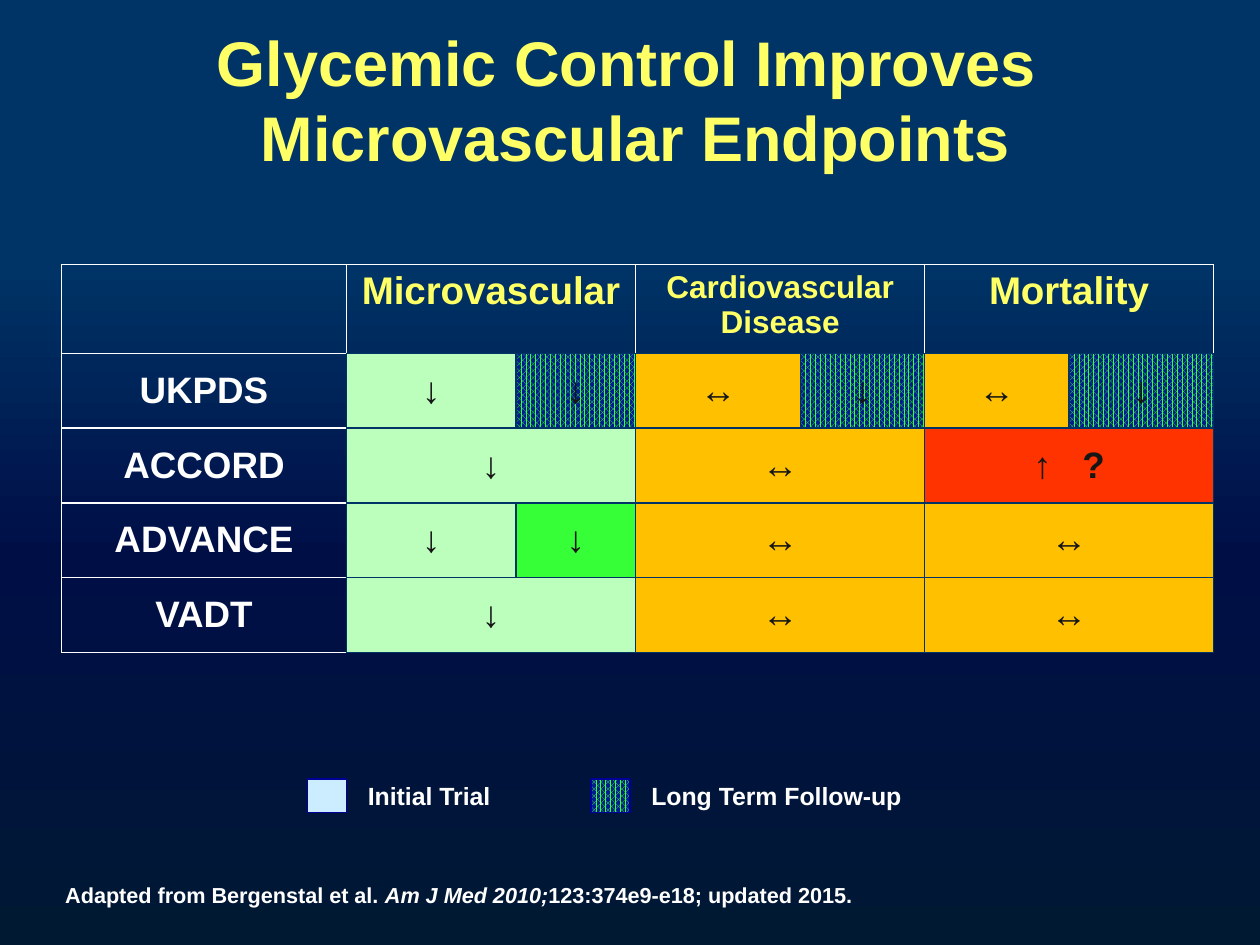
"""Build the slide on glycemic control and its trial endpoints."""
import pptx
import pptx.dml.color
import pptx.enum.dml
import pptx.enum.shapes
import pptx.enum.text
import pptx.oxml
import pptx.oxml.ns
import pptx.util

Pt = pptx.util.Pt
RGB = pptx.dml.color.RGBColor
ALIGN = pptx.enum.text.PP_ALIGN
ANCHOR = pptx.enum.text.MSO_ANCHOR

NAVY = RGB(0x00, 0x33, 0x66)
WHITE = RGB(0xFF, 0xFF, 0xFF)
YELLOW = RGB(0xFF, 0xFF, 0x66)
INK = RGB(0x16, 0x16, 0x16)
MINT = RGB(0xBC, 0xFF, 0xBC)
GREEN = RGB(0x37, 0xFF, 0x37)
GOLD = RGB(0xFF, 0xC0, 0x00)
RED = RGB(0xFF, 0x33, 0x00)
BLUE = RGB(0x01, 0x1C, 0x8D)
EDGE = RGB(0x00, 0x00, 0x99)
PALE = RGB(0xCC, 0xEC, 0xFF)
HATCH = "hatch"
SPACE = pptx.oxml.ns.nsdecls("a")


def write(para, text, size, color, slant=False):
    run = para.add_run()
    run.text = text
    form = {"name": "Arial", "size": Pt(size), "bold": True, "italic": slant}
    for key, value in form.items():
        setattr(run.font, key, value)
    run.font.color.rgb = color
    return run


def paint(fill, color):
    if color is None:
        fill.background()
    elif color == HATCH:
        fill.patterned()
        fill.pattern = pptx.enum.dml.MSO_PATTERN.PERCENT_75
        fill.fore_color.rgb = GREEN
        fill.back_color.rgb = BLUE
    else:
        fill.solid()
        fill.fore_color.rgb = color


deck = pptx.Presentation()
deck.slide_width, deck.slide_height = Pt(720), Pt(540)
slide = deck.slides.add_slide(deck.slide_layouts[5])

back = slide.background.fill
back.gradient()
grad = slide.background._cSld.bg.bgPr.find(pptx.oxml.ns.qn("a:gradFill"))
for child in list(grad):
    grad.remove(child)
stops = [(0, NAVY), (28, NAVY), (59, RGB(0x00, 0x0E, 0x46)), (100, RGB(0x00, 0x19, 0x33))]
marks = "".join(f'<a:gs pos="{pos * 1000}"><a:srgbClr val="{color}"/></a:gs>' for pos, color in stops)
grad.append(pptx.oxml.parse_xml(f"<a:gsLst {SPACE}>{marks}</a:gsLst>"))
grad.append(pptx.oxml.parse_xml(f'<a:lin {SPACE} ang="5400000" scaled="0"/>'))

title = slide.shapes.title
for key, value in {"left": 57, "top": 11.5, "width": 612, "height": 90}.items():
    setattr(title, key, Pt(value))
title.text_frame.vertical_anchor = ANCHOR.MIDDLE
head = title.text_frame.paragraphs[0]
head.alignment = ALIGN.CENTER
write(head, "Glycemic Control Improves ", 36, YELLOW)
head.add_line_break()
write(head, "Microvascular Endpoints", 36, YELLOW)

widths = [162.7, 97, 68.4, 94.3, 70.8, 82.6, 82.6]
heights = [51] + [42.7] * 4
frame = slide.shapes.add_table(5, 7, Pt(35.2), Pt(151), Pt(sum(widths)), Pt(sum(heights)))
table = frame.table
table.first_row = table.horz_banding = False
for col, width in zip(table.columns, widths):
    col.width = Pt(width)
for row, height in zip(table.rows, heights):
    row.height = Pt(height)

trials = [
    ["UKPDS", ("↓", MINT), ("↓", HATCH), ("↔", GOLD), ("↓", HATCH), ("↔", GOLD), ("↓", HATCH)],
    ["ACCORD", ("↓", MINT), None, ("↔", GOLD), None, ("↑ ?", RED), None],
    ["ADVANCE", ("↓", MINT), ("↓", GREEN), ("↔", GOLD), None, ("↔", GOLD), None],
    ["VADT", ("↓", MINT), None, ("↔", GOLD), None, ("↔", GOLD), None],
]
heads = [("Microvascular", 22), ("Cardiovascular Disease", 18), ("Mortality", 22)]
grid = [[("", None, 22, YELLOW)]]
for text, size in heads:
    grid[0] += [(text, None, size, YELLOW), None]
for label, *marks in trials:
    grid.append([(label, None, 21, WHITE)] + [mark and (*mark, 21, INK) for mark in marks])

inset = {"margin_left": Pt(5.8), "margin_right": Pt(5.8), "margin_top": Pt(3), "margin_bottom": Pt(3)}
for r, row in enumerate(grid):
    for c, item in enumerate(row):
        cell = table.cell(r, c)
        sides = dict.fromkeys("LRTB", NAVY)
        if r == 0:
            sides.update(L=WHITE, R=WHITE, T=WHITE, B=NAVY if c else WHITE)
        elif c == 0:
            sides.update(L=WHITE, T=WHITE, B=WHITE)
        for side, color in sides.items():
            cell._tc.get_or_add_tcPr().append(pptx.oxml.parse_xml(
                f'<a:ln{side} {SPACE} w="12700"><a:solidFill><a:srgbClr val="{color}"/></a:solidFill></a:ln{side}>'))
        if item is None:
            cell.fill.background()
            table.cell(r, c - 1).merge(cell)
            continue
        text, color, size, tint = item
        paint(cell.fill, color)
        for key, value in inset.items():
            setattr(cell, key, value)
        cell.vertical_anchor = ANCHOR.MIDDLE if r else ANCHOR.TOP
        para = cell.text_frame.paragraphs[0]
        para.alignment = ALIGN.CENTER
        for part in text.partition(" ") if text == "↑ ?" else [text]:
            if part:
                run = write(para, part, size, tint)
                if part == " ":
                    run._r.get_or_add_rPr().set("spc", "1170")

legend = slide.shapes.add_group_shape().shapes
keys = [("Long Term Follow-up", 337.7, 178.6, HATCH), ("Initial Trial", 175.7, 116.6, PALE)]
for text, left, width, color in keys:
    label = legend.add_textbox(Pt(left + 27.4), Pt(442.8), Pt(width), Pt(24.5))
    label.text_frame.word_wrap = True
    write(label.text_frame.paragraphs[0], text, 14.2, WHITE)
for text, left, width, color in keys[::-1]:
    box = legend.add_shape(pptx.enum.shapes.MSO_SHAPE.RECTANGLE, Pt(left), Pt(445), Pt(22.3), Pt(19.4))
    box.shadow.inherit = False
    paint(box.fill, color)
    box.line.color.rgb = EDGE
    box.line.width = Pt(1)

credit = slide.shapes.add_textbox(Pt(30.2), Pt(500.4), Pt(658), Pt(22.3))
credit.text_frame.word_wrap = True
para = credit.text_frame.paragraphs[0]
write(para, "Adapted from Bergenstal et al. ", 12.4, WHITE)
write(para, "Am J Med 2010;", 12.4, WHITE, True)
write(para, "123:374e9-e18; updated 2015.", 12.4, WHITE)

deck.save("out.pptx")
